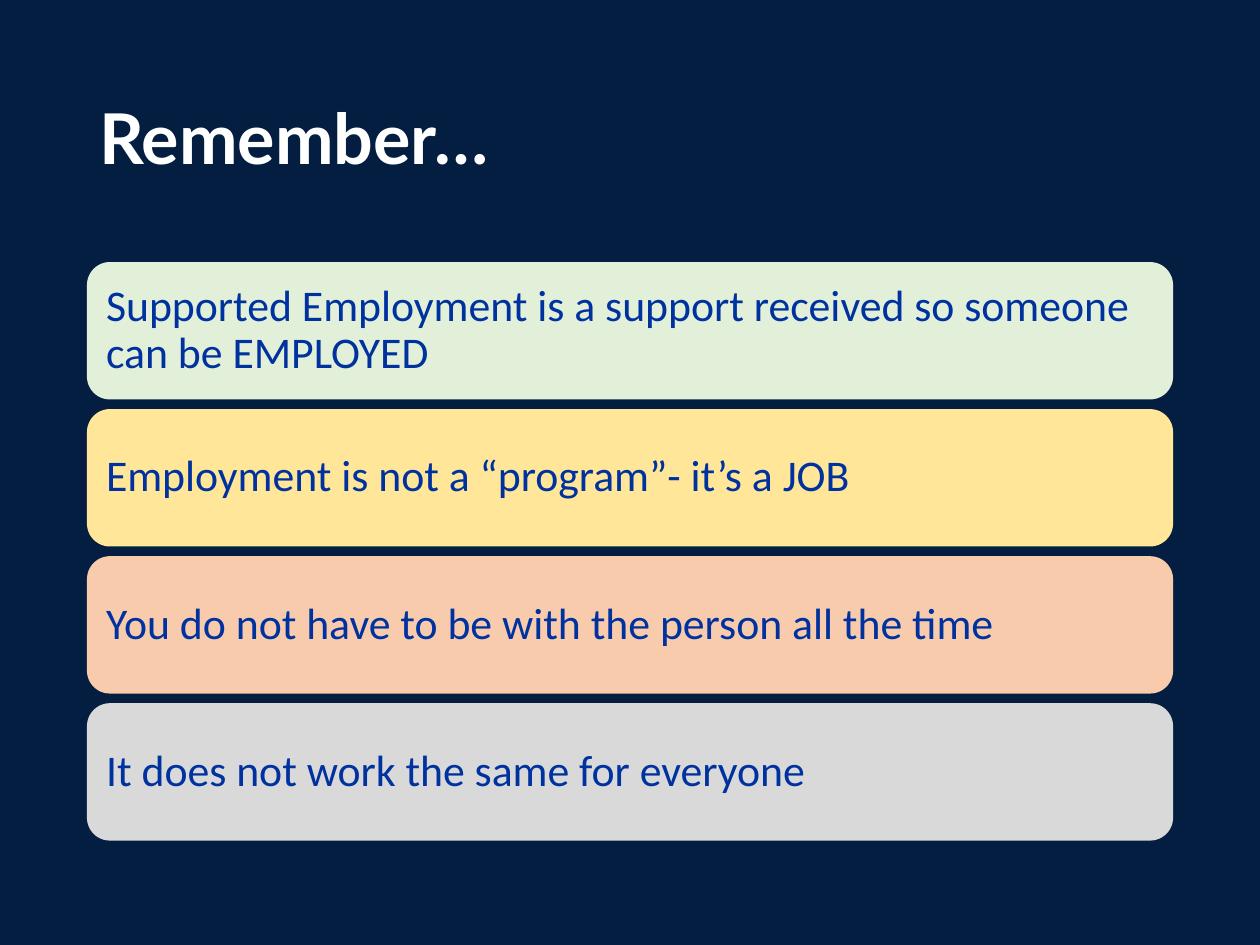
from pptx import Presentation
from pptx.dml.color import RGBColor
from pptx.enum.shapes import MSO_SHAPE as Shape
from pptx.enum.text import MSO_ANCHOR as Anchor, PP_ALIGN as Align
from pptx.util import Inches, Pt

COLORS = {
    "background": "041E42", "title": "FFFFFF", "text": "00329F",
    "green": "E2F0D9", "yellow": "FFE699", "orange": "F8CBAD", "gray": "D9D9D9",
}
TITLE = "Remember…"
POINTS = [
    ("Supported Employment is a support received so someone can be EMPLOYED", "green"),
    ("Employment is not a “program”- it’s a JOB", "yellow"),
    ("You do not have to be with the person all the time", "orange"),
    ("It does not work the same for everyone", "gray"),
]
LEFT, WIDTH = 0.69, 8.62
TOP, HEIGHT, PITCH = 2.08, 1.09, 1.167


def rgb(name):
    return RGBColor.from_string(COLORS[name])


def write(sp, text, font, size, color, bold=False):
    tf = sp.text_frame
    tf.word_wrap = True
    tf.vertical_anchor = Anchor.MIDDLE
    tf.text = text
    p = tf.paragraphs[0]
    p.alignment = Align.LEFT
    p.line_spacing = 0.9
    f = p.runs[0].font
    f.name, f.size, f.bold = font, Pt(size), bold
    f.color.rgb = rgb(color)
    return tf


def add_point(slide, index, text, fill):
    sp = slide.shapes.add_shape(
        Shape.ROUNDED_RECTANGLE, Inches(LEFT), Inches(TOP + index * PITCH),
        Inches(WIDTH), Inches(HEIGHT))
    sp.shadow.inherit = False
    sp.fill.solid()
    sp.fill.fore_color.rgb = rgb(fill)
    sp.line.fill.background()
    tf = write(sp, text, "Calibri", 25, "text")
    tf.margin_left = tf.margin_right = Inches(0.1)
    tf.margin_top = tf.margin_bottom = Inches(0.1)


def main():
    prs = Presentation()
    prs.slide_width, prs.slide_height = Inches(10), Inches(7.5)
    slide = prs.slides.add_slide(prs.slide_layouts[6])
    slide.background.fill.solid()
    slide.background.fill.fore_color.rgb = rgb("background")
    title = slide.shapes.add_textbox(
        Inches(LEFT), Inches(0.4), Inches(WIDTH), Inches(1.45))
    write(title, TITLE, "Lato", 40, "title", bold=True)
    for i, (text, fill) in enumerate(POINTS):
        add_point(slide, i, text, fill)
    prs.save("out.pptx")


if __name__ == "__main__":
    main()
